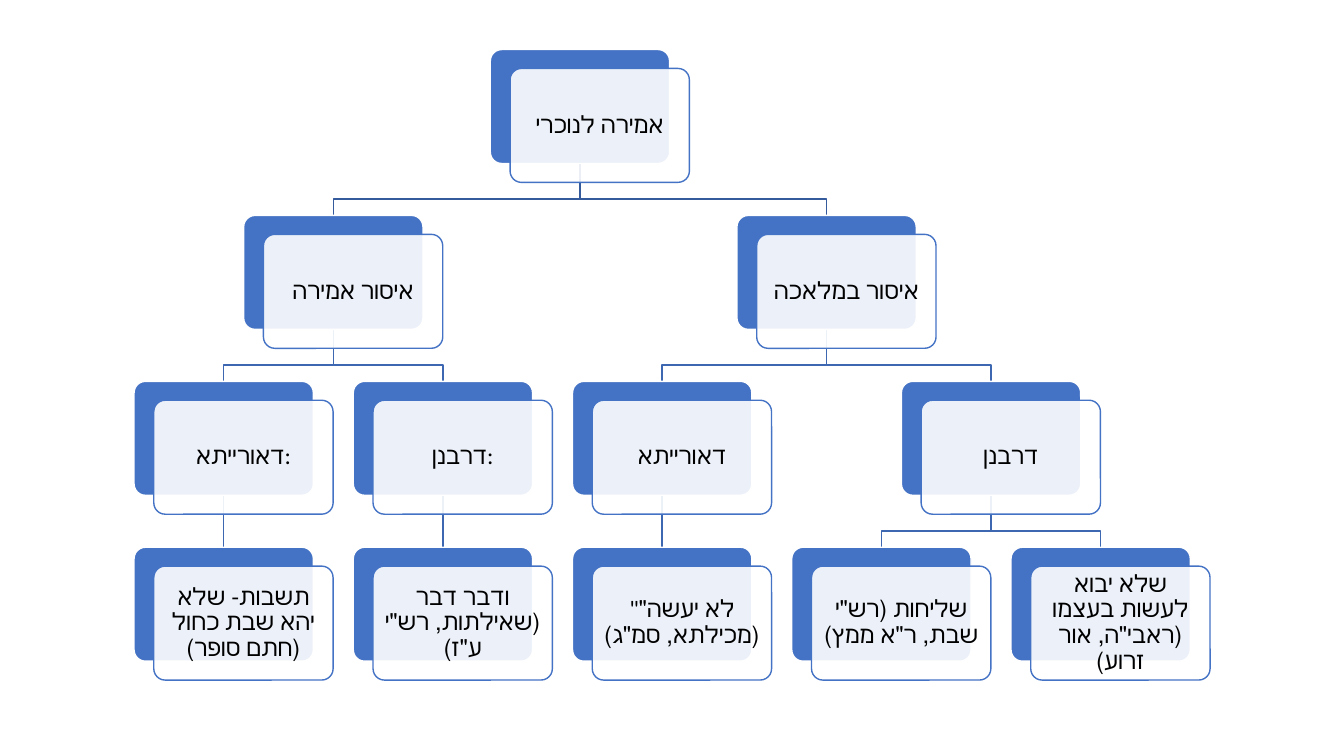
"""Builds a slide with a four-level hierarchy of stacked cards."""
from dataclasses import dataclass, field

from lxml.etree import SubElement
from pptx import Presentation
from pptx.dml.color import RGBColor
from pptx.enum.shapes import MSO_CONNECTOR, MSO_SHAPE
from pptx.enum.text import MSO_ANCHOR, PP_ALIGN
from pptx.oxml.ns import qn
from pptx.util import Pt


@dataclass(frozen=True)
class Theme:
    font: str = "Calibri"
    text_size: float = 17
    line_width: float = 1
    text: str = "000000"
    paper: str = "FFFFFF"
    accent: str = "4472C4"
    root_line: str = "365B9D"
    branch_line: str = "3E67B2"
    card_opacity: int = 90


@dataclass
class Topic:
    label: str
    children: list = field(default_factory=list)
    center: float = 0
    top: float = 0


CARD_WIDTH, CARD_HEIGHT = 128.1, 81.4
SHIFT_X, SHIFT_Y = 14.1, 13.5
FIRST_CENTER, COLUMN_STEP = 159.8, 156.6
FIRST_TOP, ROW_STEP = 35.4, 118.5
BEND_DROP = 25.5
TEXT_INSET = 5.1

ROOT = Topic("אמירה לנוכרי", [
    Topic("איסור אמירה", [
        Topic("דאורייתא:", [Topic("תשבות- שלא יהא שבת כחול (חתם סופר)")]),
        Topic("דרבנן:", [Topic('ודבר דבר (שאילתות, רש"י ע"ז)')]),
    ]),
    Topic("איסור במלאכה", [
        Topic("דאורייתא", [Topic('"לא יעשה" (מכילתא, סמ"ג)')]),
        Topic("דרבנן", [
            Topic('שליחות (רש"י שבת, ר"א ממץ)'),
            Topic('שלא יבוא לעשות בעצמו (ראבי"ה, אור זרוע)'),
        ]),
    ]),
])


class HierarchySlide:
    """Holds the theme and the slide, and draws each kind of element."""

    def __init__(self, page, theme):
        self.page = page
        self.theme = theme

    def style_line(self, shape, color):
        shape.line.color.rgb = RGBColor.from_string(color)
        shape.line.width = Pt(self.theme.line_width)

    def card(self, left, top, fill, outline):
        box = self.page.shapes.add_shape(
            MSO_SHAPE.ROUNDED_RECTANGLE,
            Pt(left), Pt(top), Pt(CARD_WIDTH), Pt(CARD_HEIGHT))
        box.adjustments[0] = 0.1
        box.shadow.inherit = False
        box.fill.solid()
        box.fill.fore_color.rgb = RGBColor.from_string(fill)
        self.style_line(box, outline)
        return box

    def fade(self, box):
        color = box.fill._xPr.find(qn("a:solidFill")).find(qn("a:srgbClr"))
        SubElement(color, qn("a:alpha"), val=str(self.theme.card_opacity * 1000))

    def label(self, box, text):
        frame = box.text_frame
        frame.text = text
        frame.word_wrap = True
        frame.vertical_anchor = MSO_ANCHOR.MIDDLE
        frame.margin_left = frame.margin_right = Pt(TEXT_INSET)
        frame.margin_top = frame.margin_bottom = Pt(TEXT_INSET)
        para = frame.paragraphs[0]
        para.alignment = PP_ALIGN.CENTER
        para.line_spacing = 0.9
        para.space_after = Pt(6)
        span = para.runs[0]
        span.font.name = self.theme.font
        span.font.size = Pt(self.theme.text_size)
        span.font.color.rgb = RGBColor.from_string(self.theme.text)

    def topic(self, topic):
        theme = self.theme
        left = topic.center - CARD_WIDTH / 2
        self.card(left, topic.top, theme.accent, theme.paper)
        front = self.card(left + SHIFT_X, topic.top + SHIFT_Y,
                          theme.paper, theme.accent)
        self.fade(front)
        self.label(front, topic.label)

    def straight_link(self, x, start, end, color):
        link = self.page.shapes.add_connector(
            MSO_CONNECTOR.STRAIGHT, Pt(x), Pt(start), Pt(x), Pt(end))
        SubElement(link._element.spPr, qn("a:effectLst"))
        self.style_line(link, color)

    def bent_link(self, parent, child, start, color):
        bend = start + BEND_DROP
        outline = self.page.shapes.build_freeform(Pt(parent.center), Pt(start))
        corners = [(parent.center, bend), (child.center, bend),
                   (child.center, child.top)]
        outline.add_line_segments(
            [(Pt(x), Pt(y)) for x, y in corners], close=False)
        link = outline.convert_to_shape()
        link.shadow.inherit = False
        link.fill.background()
        self.style_line(link, color)

    def link(self, parent, child, color):
        start = parent.top + CARD_HEIGHT
        if len(parent.children) == 1:
            self.straight_link(child.center, start, child.top, color)
        else:
            self.bent_link(parent, child, start, color)


def place(topic, columns, level=0):
    """Centers every parent over its outer children."""
    topic.top = FIRST_TOP + level * ROW_STEP
    for child in topic.children:
        place(child, columns, level + 1)
    if topic.children:
        topic.center = (topic.children[0].center + topic.children[-1].center) / 2
    else:
        topic.center = next(columns)


def walk(topic):
    """Yields a topic and all topics below it."""
    yield topic
    for child in topic.children:
        yield from walk(child)


def main():
    """Builds and saves the deck."""
    deck = Presentation()
    deck.slide_width, deck.slide_height = Pt(960), Pt(540)
    page = deck.slides.add_slide(deck.slide_layouts[6])
    theme = Theme()
    slide = HierarchySlide(page, theme)
    place(ROOT, (FIRST_CENTER + column * COLUMN_STEP for column in range(5)))
    topics = list(walk(ROOT))
    for parent in reversed(topics):
        color = theme.root_line if parent is ROOT else theme.branch_line
        for child in reversed(parent.children):
            slide.link(parent, child, color)
    for topic in topics:
        slide.topic(topic)
    deck.save("out.pptx")


if __name__ == "__main__":
    main()
